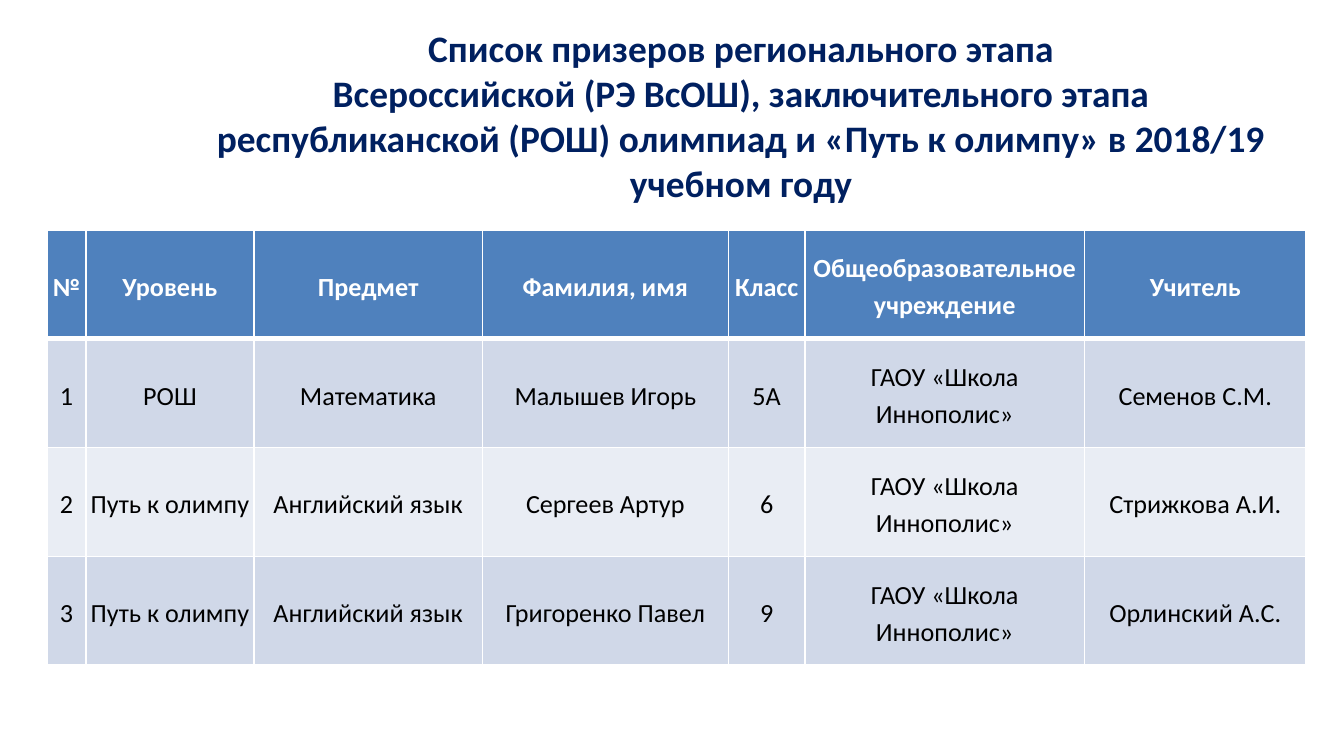
"""Build the slide listing the olympiad prize winners."""

import dataclasses
import typing

import pptx
import pptx.dml.color
import pptx.enum.text
import pptx.oxml.ns
import pptx.util
from lxml import etree
from pptx.util import Inches

COLOURS = {
    "title": "002060",
    "header": "4F81BD",
    "header_text": "FFFFFF",
    "odd_row": "D0D8E8",
    "even_row": "E9EDF4",
    "row_text": "000000",
    "border": "FFFFFF",
}
SLIDE_WIDTH = 10
SLIDE_SIZE = {
    "slide_width": Inches(SLIDE_WIDTH),
    "slide_height": Inches(SLIDE_WIDTH * 9 / 16),
}
TITLE_FONT = {"name": "Calibri", "size": pptx.util.Pt(20), "bold": True}
CELL_FONT = {"name": "Calibri", "size": pptx.util.Pt(14)}
CENTRED = {"alignment": pptx.enum.text.PP_ALIGN.CENTER}
CELL_PARAGRAPH = {**CENTRED, "line_spacing": 1.15}
CELL_FORMAT = {
    "margin_left": Inches(0.01),
    "margin_top": Inches(0.01),
    "margin_right": Inches(0.01),
    "margin_bottom": 0,
    "vertical_anchor": pptx.enum.text.MSO_ANCHOR.MIDDLE,
}
TITLE_LINES = (
    "Список призеров регионального этапа",
    "Всероссийской (РЭ ВсОШ), заключительного этапа республиканской (РОШ) "
    "олимпиад и «Путь к олимпу» в 2018/19 учебном году",
)
HEADINGS = {
    "№": 0.29,
    "Уровень": 1.25,
    "Предмет": 1.7,
    "Фамилия, имя": 1.83,
    "Класс": 0.57,
    "Общеобразовательное учреждение": 2.08,
    "Учитель": 1.65,
}
ROW_HEIGHT = 0.81


@dataclasses.dataclass(frozen=True)
class Winner:
    """One prize winner."""

    level: str
    subject: str
    student: str
    grade: str
    teacher: str
    school: str = "ГАОУ «Школа Иннополис»"

    def values(self, number: int) -> tuple[str, ...]:
        """Return the texts of the winner's row."""
        return (str(number), self.level, self.subject, self.student,
                self.grade, self.school, self.teacher)


WINNERS = (
    Winner("РОШ", "Математика", "Малышев Игорь", "5А", "Семенов С.М."),
    Winner("Путь к олимпу", "Английский язык", "Сергеев Артур", "6", "Стрижкова А.И."),
    Winner("Путь к олимпу", "Английский язык", "Григоренко Павел", "9", "Орлинский А.С."),
)


def apply_format(target: typing.Any, values: dict[str, typing.Any]) -> None:
    """Set every attribute named in the format values."""
    for attribute, value in values.items():
        setattr(target, attribute, value)


def colour(key: str) -> pptx.dml.color.RGBColor:
    """Return a named colour."""
    return pptx.dml.color.RGBColor.from_string(COLOURS[key])


def add_title(slide: typing.Any) -> None:
    """Draw the centred title."""
    title = slide.shapes.add_textbox(Inches(1.3), Inches(0.14), Inches(8.43), Inches(1.45))
    frame = title.text_frame
    frame.word_wrap = True
    frame.auto_size = pptx.enum.text.MSO_AUTO_SIZE.SHAPE_TO_FIT_TEXT
    frame.text = "\n".join(TITLE_LINES)
    for paragraph in frame.paragraphs:
        apply_format(paragraph, CENTRED)
        for run in paragraph.runs:
            apply_format(run.font, TITLE_FONT)
            run.font.color.rgb = colour("title")


def add_borders(cell: typing.Any, widths: dict[str, float]) -> None:
    """Draw the cell's borders with widths in points."""
    qn = pptx.oxml.ns.qn
    properties = cell._tc.get_or_add_tcPr()
    for side, width in widths.items():
        line = etree.SubElement(properties, qn(f"a:ln{side}"), w=str(pptx.util.Pt(width)))
        fill = etree.SubElement(line, qn("a:solidFill"))
        etree.SubElement(fill, qn("a:srgbClr"), val=COLOURS["border"])


def fill_cell(cell: typing.Any, text: str, row: int) -> None:
    """Write and style one cell of the given row."""
    is_header = row == 0
    add_borders(cell, {"L": 1, "R": 1, "T": 3 if row == 1 else 1, "B": 3 if is_header else 1})
    apply_format(cell, CELL_FORMAT)
    cell.fill.solid()
    band = "odd_row" if row % 2 else "even_row"
    cell.fill.fore_color.rgb = colour("header" if is_header else band)
    cell.text = text
    paragraph = cell.text_frame.paragraphs[0]
    apply_format(paragraph, CELL_PARAGRAPH)
    font = paragraph.runs[0].font
    apply_format(font, {**CELL_FONT, "bold": is_header})
    font.color.rgb = colour("header_text" if is_header else "row_text")


def add_winners(slide: typing.Any) -> None:
    """Draw the table of winners."""
    rows = [tuple(HEADINGS)]
    rows += [winner.values(number) for number, winner in enumerate(WINNERS, 1)]
    table = slide.shapes.add_table(
        len(rows), len(HEADINGS), Inches(0.35), Inches(1.71),
        Inches(sum(HEADINGS.values())), Inches(ROW_HEIGHT * len(rows)),
    ).table
    for column, width in zip(table.columns, HEADINGS.values()):
        column.width = Inches(width)
    for row, texts in enumerate(rows):
        table.rows[row].height = Inches(ROW_HEIGHT)
        for column, text in enumerate(texts):
            fill_cell(table.cell(row, column), text, row)


def main() -> None:
    """Build and save the presentation."""
    presentation = pptx.Presentation()
    apply_format(presentation, SLIDE_SIZE)
    slide = presentation.slides.add_slide(presentation.slide_layouts[6])
    add_title(slide)
    add_winners(slide)
    presentation.save("out.pptx")


if __name__ == "__main__":
    main()
